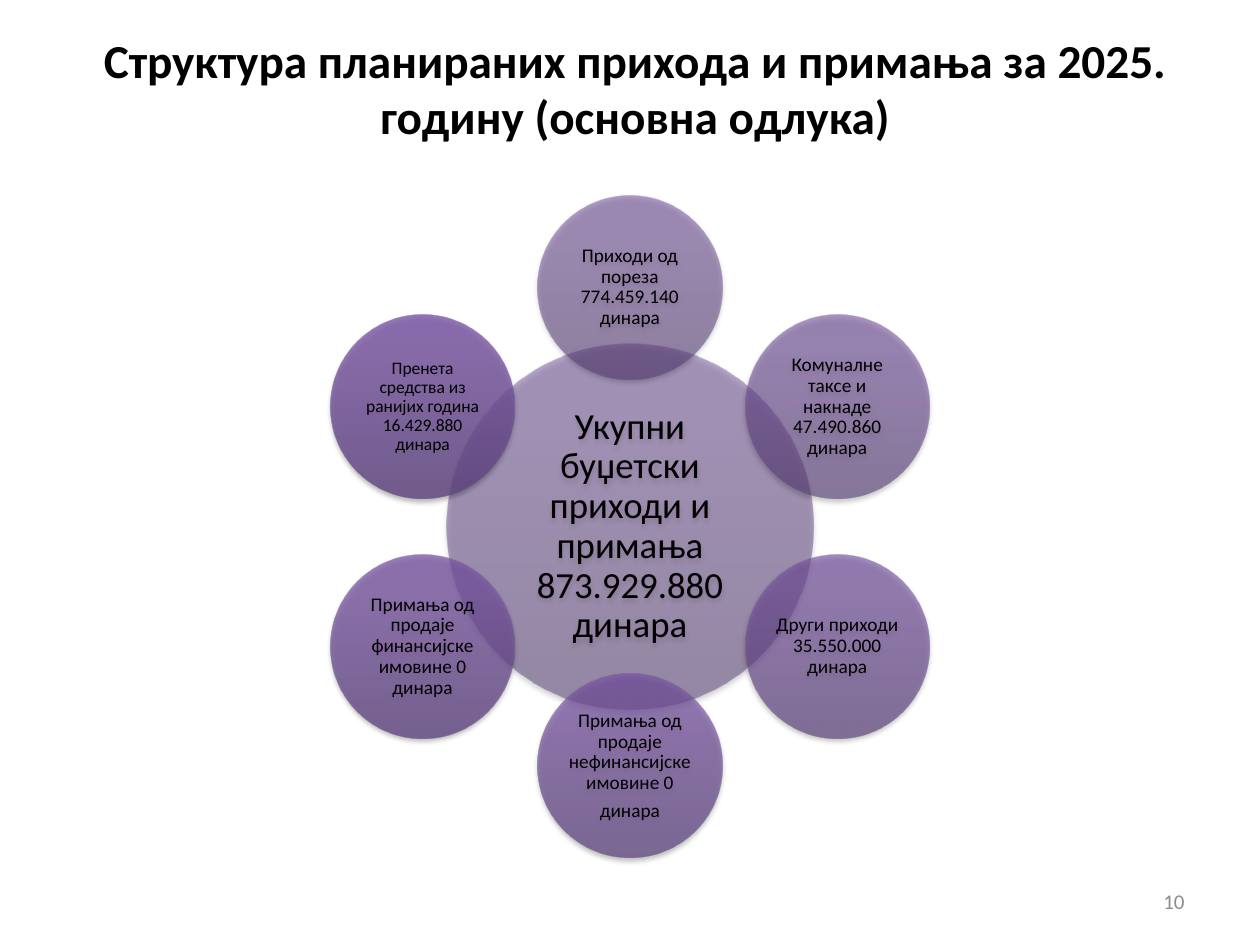
from math import cos, radians, sin

from lxml import etree
from pptx import Presentation
from pptx.dml.color import RGBColor
from pptx.enum.shapes import MSO_SHAPE
from pptx.enum.text import MSO_ANCHOR as ANCHOR, PP_ALIGN as ALIGN
from pptx.oxml import parse_xml
from pptx.oxml.ns import nsdecls, qn
from pptx.util import Inches, Pt

FONT = "Calibri"
CENTER_X, CENTER_Y = 5, 4.18
ORBIT = 1.9
HUB_SIZE, SATELLITE_SIZE = 2.91, 1.46

HUB = ("Укупни буџетски приходи и примања 873.929.880 динара",
       ("563D74", "705097", "704F99"))

# Clockwise from the top: text, font size, gradient from bottom to top
SATELLITES = [
    ("Приходи од пореза\v774.459.140 динара", 11,
     ("583E76", "72519A", "72509C")),
    ("Комуналне таксе и накнаде 47.490.860 динара", 11,
     ("593F79", "74529D", "74519F")),
    ("Други приходи 35.550.000 динара", 11,
     ("5B407B", "7653A0", "7652A2")),
    ("Примања од продаје нефинансијске имовине 0\nдинара", 11,
     ("5C417D", "7854A3", "7853A5")),
    ("Примања од продаје финансијске имовине 0 динара", 11,
     ("5E437F", "7A57A4", "7A56A7")),
    ("Пренета средства из ранијих година 16.429.880 динара", 10,
     ("5F4580", "7C59A6", "7C58A8")),
]


def rgb(color):
    return RGBColor.from_string(color)


def write_text(tf, text, size, color="000000", align=ALIGN.CENTER, bold=False):
    tf.word_wrap = True
    tf.vertical_anchor = ANCHOR.MIDDLE
    tf.text = text
    for p in tf.paragraphs:
        p.alignment = align
        p.font.name = FONT
        p.font.size = Pt(size)
        p.font.bold = bold
        p.font.color.rgb = rgb(color)


def add_label(slide, box, text, size, **style):
    s = slide.shapes.add_textbox(*map(Inches, box))
    write_text(s.text_frame, text, size, **style)


def fill_gradient(s, colors, opacity):
    """Fill upwards with translucent colours and add a soft shadow below."""
    stops = "".join(
        f'<a:gs pos="{pos * 1000}"><a:srgbClr val="{color}">'
        f'<a:alpha val="{opacity * 1000}"/></a:srgbClr></a:gs>'
        for pos, color in zip((0, 80, 100), colors))
    gradient = parse_xml(
        f'<a:gradFill {nsdecls("a")} rotWithShape="1"><a:gsLst>{stops}</a:gsLst>'
        '<a:lin ang="16200000" scaled="0"/></a:gradFill>')
    s.line.fill.background()
    s._element.spPr.find(qn("a:ln")).addprevious(gradient)

    s.shadow.inherit = False
    effects = s._element.spPr.find(qn("a:effectLst"))
    shadow = etree.SubElement(
        effects, qn("a:outerShdw"), blurRad=str(Pt(3.1)), dist=str(Pt(1.8)),
        dir="5400000", rotWithShape="0")
    black = etree.SubElement(shadow, qn("a:srgbClr"), val="000000")
    etree.SubElement(black, qn("a:alpha"), val="35000")


def add_circle(slide, x, y, diameter, text, size, colors, opacity, inset=0.02):
    """Add a circle centred on x, y."""
    s = slide.shapes.add_shape(
        MSO_SHAPE.OVAL, Inches(x - diameter / 2), Inches(y - diameter / 2),
        Inches(diameter), Inches(diameter))
    fill_gradient(s, colors, opacity)
    tf = s.text_frame
    tf.margin_left = tf.margin_right = Inches(inset)
    tf.margin_top = tf.margin_bottom = Inches(inset)
    write_text(tf, text, size)
    for p in tf.paragraphs:
        p.line_spacing = 0.9
        p.space_after = Pt(0.35 * size)


def add_radial_diagram(slide):
    text, colors = HUB
    add_circle(slide, CENTER_X, CENTER_Y, HUB_SIZE, text, 21, colors, 50, 0.03)
    for i, (text, size, colors) in enumerate(SATELLITES):
        angle = radians(i * 360 / len(SATELLITES))
        add_circle(slide, CENTER_X + ORBIT * sin(angle),
                   CENTER_Y - ORBIT * cos(angle), SATELLITE_SIZE,
                   text, size, colors, 55 + 5 * i)


def main():
    prs = Presentation()
    prs.slide_width, prs.slide_height = Inches(10), Inches(7.5)
    slide = prs.slides.add_slide(prs.slide_layouts[6])
    add_label(slide, (0.54, 0.27, 9, 0.85),
              "Структура планираних прихода и примања за 2025. годину "
              "(основна одлука)", 27, bold=True)
    add_label(slide, (7.17, 6.95, 2.33, 0.4), "10", 12,
              color="8C8C8C", align=ALIGN.RIGHT)
    add_radial_diagram(slide)
    prs.save("out.pptx")


if __name__ == "__main__":
    main()
